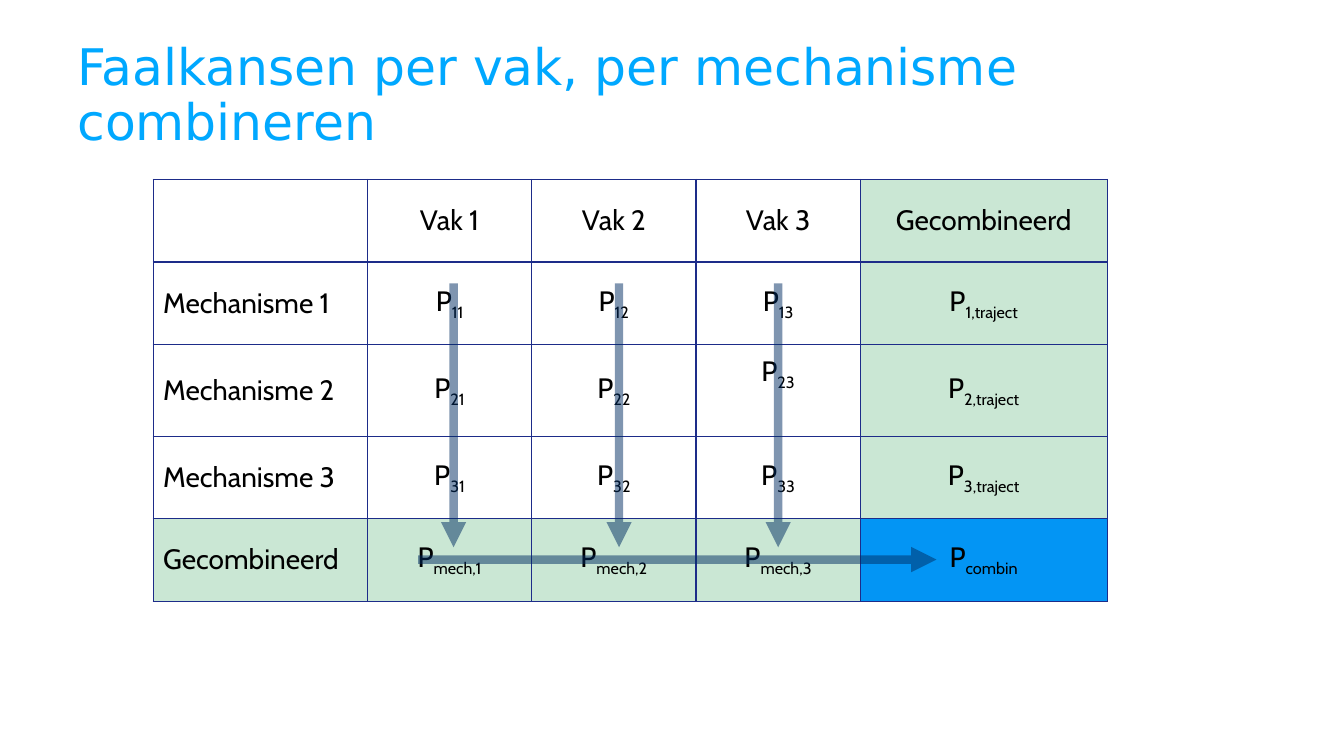
"""Build the slide that combines failure probabilities per section and mechanism."""
from typing import NamedTuple

from lxml.etree import SubElement
from pptx import Presentation
from pptx.dml.color import RGBColor
from pptx.enum.shapes import MSO_CONNECTOR
from pptx.enum.text import MSO_ANCHOR as ANCHOR, PP_ALIGN as ALIGN
from pptx.oxml.ns import qn
from pptx.util import Cm, Pt

FONT = "Cabin"
TITLE_FONT = "DejaVu Sans"
TEXT = "000000"
TITLE = "00A8FF"
BORDER = "1D2C89"
COMBINED = "CAE7D4"
TOTAL = "0395F4"
ARROW = "002C62"
COLS = [5.4, 4.14, 4.14, 4.14, 6.22]
ROWS = [2.08, 2.08, 2.31, 2.08, 2.08]
LAST = 4


class Entry(NamedTuple):
    base: str
    sub: str = ""
    fill: str = ""
    align: ALIGN = ALIGN.CENTER
    bottom: float = 0


class Arrow(NamedTuple):
    x1: float
    y1: float
    x2: float
    y2: float


def rgb(color: str) -> RGBColor:
    return RGBColor.from_string(color)


def entry_at(row: int, col: int) -> Entry:
    """Return the content and look of one table cell."""
    fill = COMBINED if LAST in (row, col) else ""
    if row == 0:
        heading = "Gecombineerd" if col == LAST else f"Vak {col}" if col else ""
        return Entry(heading, fill=fill)
    if col == 0:
        heading = "Gecombineerd" if row == LAST else f"Mechanisme {row}"
        return Entry(heading, fill=fill, align=ALIGN.LEFT)
    if row == col == LAST:
        return Entry("P", "combin", TOTAL)
    if row == LAST:
        return Entry("P", f"mech,{col}", fill)
    if col == LAST:
        return Entry("P", f"{row},traject", fill)
    return Entry("P", f"{row}{col}", bottom=0.86 if (row, col) == (2, 3) else 0)


def fill_cell(cell, entry: Entry) -> None:
    """Write one entry with its borders and fill."""
    tc_pr = cell._tc.get_or_add_tcPr()
    for side in ("lnL", "lnR", "lnT", "lnB"):
        ln = SubElement(tc_pr, qn(f"a:{side}"), w=str(Pt(1)))
        solid = SubElement(ln, qn("a:solidFill"))
        SubElement(solid, qn("a:srgbClr"), val=BORDER)
    if entry.fill:
        cell.fill.solid()
        cell.fill.fore_color.rgb = rgb(entry.fill)
    else:
        cell.fill.background()
    cell.vertical_anchor = ANCHOR.MIDDLE
    cell.margin_left = cell.margin_right = Cm(0.25)
    cell.margin_top, cell.margin_bottom = Cm(0), Cm(entry.bottom)
    p = cell.text_frame.paragraphs[0]
    p.text = entry.base
    p.alignment = entry.align
    if entry.sub:
        r = p.add_run()
        r.text = entry.sub
        r._r.get_or_add_rPr().set("baseline", "-25000")
    for r in p.runs:
        r.font.name, r.font.size = FONT, Pt(20)
        r.font.color.rgb = rgb(TEXT)


def add_probabilities(s) -> None:
    """Add the table of failure probabilities."""
    frame = s.shapes.add_table(len(ROWS), len(COLS), Cm(3.86), Cm(4.52),
                               Cm(sum(COLS)), Cm(sum(ROWS)))
    table = frame.table
    table.first_row = table.horz_banding = False
    for col, width in enumerate(COLS):
        table.columns[col].width = Cm(width)
    for row, height in enumerate(ROWS):
        table.rows[row].height = Cm(height)
        for col in range(len(COLS)):
            fill_cell(table.cell(row, col), entry_at(row, col))


def add_arrow(s, arrow: Arrow) -> None:
    """Add one half-transparent arrow."""
    line = s.shapes.add_connector(MSO_CONNECTOR.STRAIGHT, *map(Cm, arrow))
    line.line.width = Pt(6)
    line.line.color.rgb = rgb(ARROW)
    ln = line.line._get_or_add_ln()
    SubElement(ln.find(f".//{qn('a:srgbClr')}"), qn("a:alpha"), val="50000")
    SubElement(ln, qn("a:tailEnd"), type="triangle")
    SubElement(line._element.spPr, qn("a:effectLst"))


def add_title(s) -> None:
    """Add the slide title."""
    sp = s.shapes.add_textbox(Cm(1.7), Cm(0.76), Cm(30.48), Cm(3.18))
    tf = sp.text_frame
    tf.word_wrap = True
    tf.vertical_anchor = ANCHOR.BOTTOM
    tf.text = "Faalkansen per vak, per mechanisme combineren"
    p = tf.paragraphs[0]
    p.line_spacing = 0.9
    r = p.runs[0]
    r.font.name, r.font.size = TITLE_FONT, Pt(36)
    r.font.color.rgb = rgb(TITLE)


def main() -> None:
    """Build and save the presentation."""
    prs = Presentation()
    prs.slide_width, prs.slide_height = Cm(33.87), Cm(19.05)
    s = prs.slides.add_slide(prs.slide_layouts[6])
    add_probabilities(s)
    arrows = [Arrow(x, 7.14, x, 13.79) for x in (11.43, 15.6, 19.61)]
    for arrow in [*arrows, Arrow(10.54, 14.1, 23.6, 14.1)]:
        add_arrow(s, arrow)
    add_title(s)
    prs.save("out.pptx")


if __name__ == "__main__":
    main()
